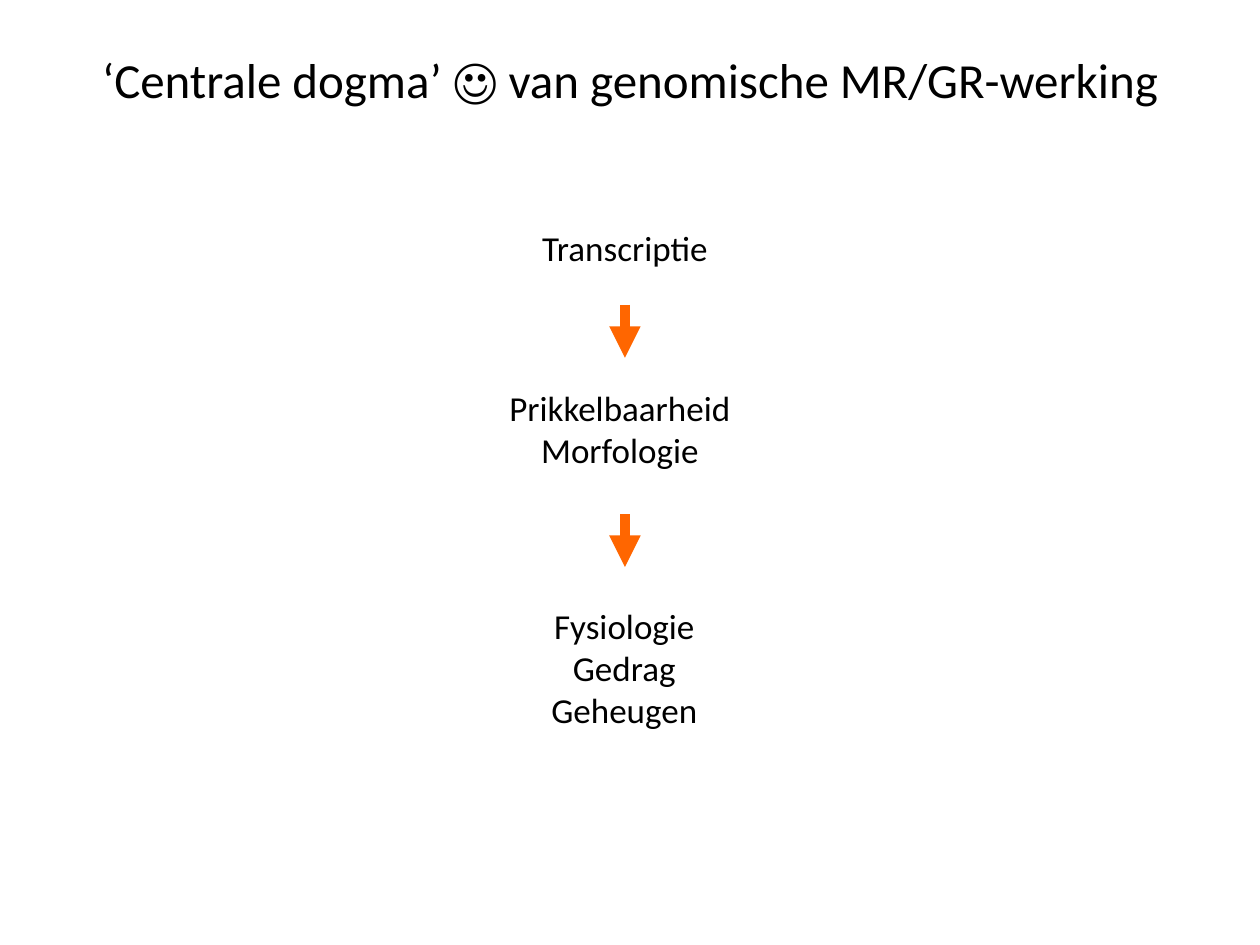
from lxml import etree
from pptx import Presentation
from pptx.dml.color import RGBColor
from pptx.enum.shapes import MSO_CONNECTOR
from pptx.enum.text import MSO_ANCHOR, PP_ALIGN
from pptx.oxml.ns import qn
from pptx.util import Inches, Pt

FONT = "Calibri"
BLACK, ORANGE = "000000", "FF6600"

# Content: lines of text with left, top, width, height in inches
TITLE = "‘Centrale dogma’ ☺ van genomische MR/GR-werking"
STEPS = [
    (["Transcriptie"], (3.46, 1.75, 3, 0.43)),
    (["Prikkelbaarheid", "Morfologie"], (3.38, 3.02, 3.08, 0.77)),
    (["Fysiologie", "Gedrag", "Geheugen"], (3.33, 4.75, 3.25, 1.11)),
]
ARROW_X, ARROW_LENGTH = 4.96, 0.42
ARROW_TOPS = [2.42, 4.08]


def color(value):
    return RGBColor.from_string(value)


def add_text(slide, lines, box, size, anchor=MSO_ANCHOR.TOP):
    tf = slide.shapes.add_textbox(*map(Inches, box)).text_frame
    tf.word_wrap = True
    tf.vertical_anchor = anchor
    for i, line in enumerate(lines):
        p = tf.add_paragraph() if i else tf.paragraphs[0]
        p.alignment = PP_ALIGN.CENTER
        r = p.add_run()
        r.text = line
        r.font.name = FONT
        r.font.size = Pt(size)
        r.font.color.rgb = color(BLACK)


def add_down_arrow(slide, x, top, length):
    arrow = slide.shapes.add_connector(
        MSO_CONNECTOR.STRAIGHT, Inches(x), Inches(top), Inches(x), Inches(top + length))
    arrow.line.color.rgb = color(ORANGE)
    arrow.line.width = Pt(6)
    sp_pr = arrow._element.spPr
    etree.SubElement(sp_pr.find(qn("a:ln")), qn("a:tailEnd"), type="triangle")
    etree.SubElement(sp_pr, qn("a:effectLst"))


prs = Presentation()
prs.slide_width, prs.slide_height = Inches(10), Inches(7.5)
s = prs.slides.add_slide(prs.slide_layouts[6])

# Title
add_text(s, [TITLE], (0, 0, 10, 1.25), 28, MSO_ANCHOR.MIDDLE)

# Steps from transcription to behaviour
for lines, box in STEPS:
    add_text(s, lines, box, 20)

# Arrows between the steps
for top in ARROW_TOPS:
    add_down_arrow(s, ARROW_X, top, ARROW_LENGTH)

prs.save("out.pptx")
